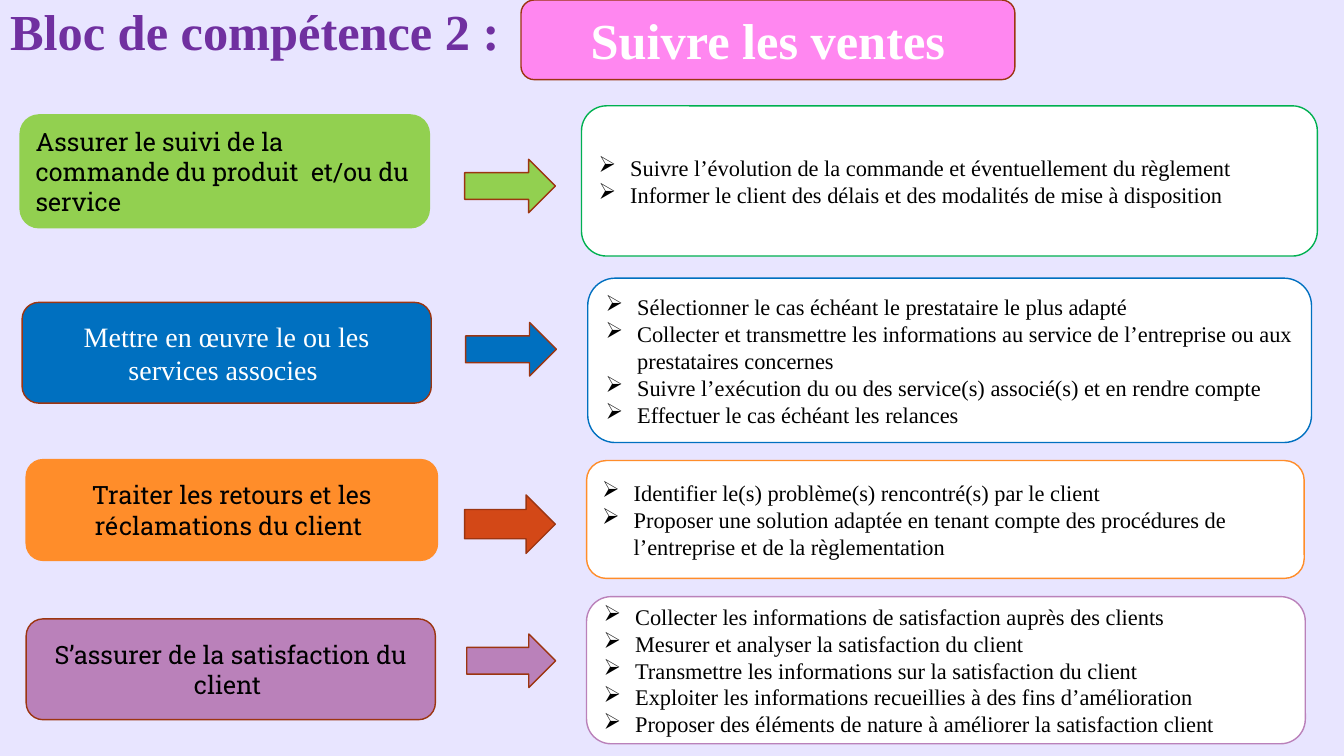
from lxml.etree import SubElement
from pptx import Presentation
from pptx.dml.color import RGBColor
from pptx.enum.shapes import MSO_SHAPE
from pptx.enum.text import MSO_ANCHOR, MSO_AUTO_SIZE, PP_ALIGN
from pptx.oxml.ns import qn
from pptx.util import Pt

THEME = {
    "serif": "Times New Roman", "slab": "Roboto Slab",
    "heading": 36, "large": 20, "label": 18, "body": 16,
    "bg": "E8E5FF", "purple": "7030A0", "pink": "FF87F0", "brown": "9C3511",
    "green": "92D050", "emerald": "00B050", "blue": "0070C0",
    "orange": "FF8D2A", "rust": "D34817", "mauve": "BA81BA",
    "white": "FFFFFF", "black": "000000",
}
SLAB = ("slab", "label", "black")
ROWS = [
    {"label": "Assurer le suivi de la commande du produit  et/ou du service",
     "align": PP_ALIGN.LEFT, "font": SLAB,
     "boxes": [(14.4, 82.1, 292.3, 80.6), (331.9, 113.8, 64.8, 38.2), (415.4, 75.6, 525.6, 107.3)],
     "colors": [("green", "green"), ("green", "brown"), ("white", "emerald")],
     "tasks": ["Suivre l’évolution de la commande et éventuellement du règlement",
               "Informer le client des délais et des modalités de mise à disposition"]},
    {"label": "Mettre en œuvre le ou les services associes ",
     "align": PP_ALIGN.CENTER, "font": ("serif", "large", "white"),
     "boxes": [(15.8, 216, 292.3, 72), (332.6, 230.4, 64.8, 38.2), (419.8, 198.7, 517, 117.4)],
     "colors": [("blue", "brown"), ("blue", "brown"), ("white", "blue")],
     "tasks": ["Sélectionner le cas échéant le prestataire le plus adapté",
               "Collecter et transmettre les informations au service de l’entreprise ou aux prestataires concernes",
               "Suivre l’exécution du ou des service(s) associé(s) et en rendre compte",
               "Effectuer le cas échéant les relances"]},
    {"label": "Traiter les retours et les réclamations du client ",
     "align": PP_ALIGN.CENTER, "font": SLAB,
     "boxes": [(18.7, 328.3, 293.8, 72), (331.9, 353.5, 64.8, 41.8), (419, 329, 512.6, 84.2)],
     "colors": [("orange", "orange"), ("rust", "brown"), ("white", "orange")],
     "tasks": ["Identifier le(s) problème(s) rencontré(s) par le client",
               "Proposer une solution adaptée en tenant compte des procédures de l’entreprise et de la règlementation"]},
    {"label": "S’assurer de la satisfaction du client ",
     "align": PP_ALIGN.CENTER, "font": SLAB,
     "boxes": [(18.7, 442.1, 292.3, 72), (333.4, 452.9, 63.4, 38.2), (419, 426.2, 513.4, 105.1)],
     "colors": [("mauve", "brown"), ("mauve", "brown"), ("white", "mauve")],
     "tasks": ["Collecter les informations de satisfaction auprès des clients",
               "Mesurer et analyser la satisfaction du client",
               "Transmettre les informations sur la satisfaction du client",
               "Exploiter les informations recueillies à des fins d’amélioration",
               "Proposer des éléments de nature à améliorer la satisfaction client"]},
]


def add_box(kind, box, colors):
    s = slide.shapes.add_shape(kind, *[Pt(v) for v in box])
    s.shadow.inherit = False
    s.fill.solid()
    s.fill.fore_color.rgb = RGBColor.from_string(THEME[colors[0]])
    s.line.color.rgb = RGBColor.from_string(THEME[colors[1]])
    s.line.width = Pt(1)
    return s


def write(s, lines, font, align, bold=False, bullet=None, anchor=MSO_ANCHOR.MIDDLE):
    face, size, color = font
    tf = s.text_frame
    frame_format = {"word_wrap": True, "auto_size": MSO_AUTO_SIZE.NONE, "vertical_anchor": anchor}
    for name, value in frame_format.items():
        setattr(tf, name, value)
    for i, line in enumerate(lines):
        p = tf.add_paragraph() if i else tf.paragraphs[0]
        p.alignment = align
        if bullet:
            pPr = p._p.get_or_add_pPr()
            pPr.set("marL", str(Pt(22.5)))
            pPr.set("indent", str(-Pt(22.5)))
            SubElement(pPr, qn("a:buChar")).set("char", bullet)
        r = p.add_run()
        r.text = line
        for name, value in {"name": THEME[face], "size": Pt(THEME[size]), "bold": bold}.items():
            setattr(r.font, name, value)
        r.font.color.rgb = RGBColor.from_string(THEME[color])


prs = Presentation()
prs.slide_width, prs.slide_height = Pt(960), Pt(540)
slide = prs.slides.add_slide(prs.slide_layouts[5])
slide.background.fill.solid()
slide.background.fill.fore_color.rgb = RGBColor.from_string(THEME["bg"])

title = slide.shapes.title
for name, value in {"left": 0, "top": 0, "width": 960, "height": 94.3}.items():
    setattr(title, name, Pt(value))
margins = {"margin_left": 7.2, "margin_top": 0, "margin_right": 5.8, "margin_bottom": 0}
for name, value in margins.items():
    setattr(title.text_frame, name, Pt(value))
write(title, ["Bloc de compétence 2 :"], ("serif", "heading", "purple"),
      PP_ALIGN.LEFT, bold=True, anchor=MSO_ANCHOR.TOP)

banner = add_box(MSO_SHAPE.ROUNDED_RECTANGLE, (372.2, 0, 352.8, 56.9), ("pink", "brown"))
write(banner, ["Suivre les ventes"], ("serif", "heading", "white"), PP_ALIGN.CENTER, bold=True)

kinds = [MSO_SHAPE.ROUNDED_RECTANGLE, MSO_SHAPE.RIGHT_ARROW, MSO_SHAPE.ROUNDED_RECTANGLE]
for row in ROWS:
    label, arrow, panel = [add_box(*args) for args in zip(kinds, row["boxes"], row["colors"])]
    write(label, [row["label"]], row["font"], row["align"])
    write(panel, row["tasks"], ("serif", "body", "black"), PP_ALIGN.LEFT, bullet="➢")

prs.save("out.pptx")
